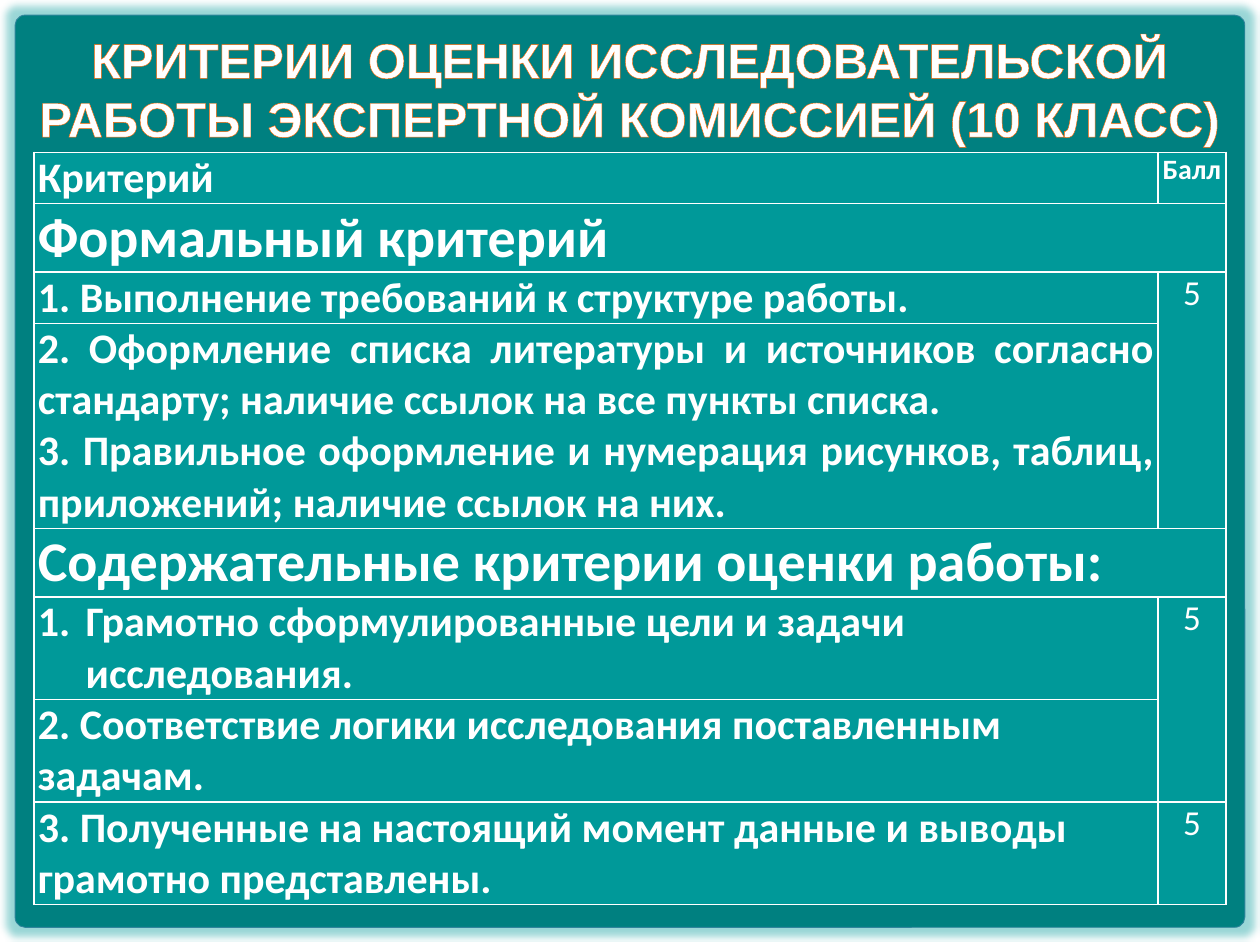
from dataclasses import dataclass
from lxml import etree
from pptx import Presentation
from pptx.dml.color import RGBColor as RGB
from pptx.enum.shapes import MSO_SHAPE as Shape
from pptx.enum.text import MSO_ANCHOR as Anchor, MSO_AUTO_SIZE as Fit, PP_ALIGN as Align
from pptx.oxml.ns import qn
from pptx.util import Inches, Pt


@dataclass(frozen=True)
class Theme:
    white: str = "FFFFFF"
    panel: str = "008080"
    edge: str = "31859C"
    cell: str = "009999"
    trim: str = "FF6600"
    head: str = "Arial"
    body: str = "Calibri"
    title: int = 28
    group: int = 32
    text: int = 24
    score: int = 20
    label: int = 16


T = Theme()
HEADS = ("Критерий", "Балл")
# Each group: heading, criteria rows, scores as (first row, row count, value)
GROUPS = [
    ("Формальный критерий", [
        ["1. Выполнение требований к структуре работы. "],
        ["2. Оформление списка литературы и источников согласно стандарту; "
         "наличие ссылок на все пункты списка.",
         "3. Правильное оформление и нумерация рисунков, таблиц, приложений; "
         "наличие ссылок на них."],
    ], Align.JUSTIFY, [(0, 2, "5")]),
    ("Содержательные критерии оценки работы:", [
        ["Грамотно сформулированные цели и задачи исследования."],
        ["2. Соответствие логики исследования поставленным задачам."],
        ["3. Полученные на настоящий момент данные и выводы грамотно представлены."],
    ], Align.LEFT, [(0, 2, "5"), (2, 1, "5")]),
]
COLS = (8.92, 0.54)
ROWS = (0.4, 0.54, 0.39, 1.6, 0.54, 0.8, 0.8, 0.8)


def sub(node, tag, **attrs):
    return etree.SubElement(node, qn(tag), {k: str(v) for k, v in attrs.items()})


def line(tag, color, width):
    node = etree.Element(qn(tag), {"w": str(Pt(width))})
    sub(sub(node, "a:solidFill"), "a:srgbClr", val=color)
    return node


def write(frame, *texts, size=T.text, font=T.body, bold=True, align=Align.LEFT,
          gap=0, trim=None, auto=False):
    frame.word_wrap = True
    for i, text in enumerate(texts):
        para = frame.paragraphs[0] if i == 0 else frame.add_paragraph()
        para.alignment = align
        para.space_before = para.space_after = Pt(gap)
        run = para.add_run()
        run.text = text
        run.font.size, run.font.name, run.font.bold = Pt(size), font, bold
        run.font.color.rgb = RGB.from_string(T.white)
        if trim:
            run.font._element.insert(0, line("a:ln", trim, 0.25))
        if auto:
            props = para._p.get_or_add_pPr()
            props.set("marL", str(Inches(0.38)))
            props.set("indent", str(-Inches(0.38)))
            sub(props, "a:buFont", typeface="+mj-lt")
            sub(props, "a:buAutoNum", type="arabicPeriod")


def panel(slide, box):
    back = slide.shapes.add_shape(Shape.ROUNDED_RECTANGLE, *map(Inches, box))
    back.adjustments[0] = 0.011
    back.fill.solid()
    back.fill.fore_color.rgb = RGB.from_string(T.panel)
    back.line.color.rgb = RGB.from_string(T.edge)
    back.line.width = Pt(0.5)
    back.shadow.inherit = False
    # Soft glow around the edge
    glow = sub(back._element.spPr.find(qn("a:effectLst")), "a:glow", rad=Inches(0.11))
    sub(sub(glow, "a:srgbClr", val=T.cell), "a:alpha", val=40000)


def title(slide, box):
    head = slide.shapes.title
    head.left, head.top, head.width, head.height = map(Inches, box)
    frame = head.text_frame
    frame.auto_size = Fit.NONE
    frame.vertical_anchor = Anchor.MIDDLE
    write(frame, "КРИТЕРИИ ОЦЕНКИ ИССЛЕДОВАТЕЛЬСКОЙ РАБОТЫ ЭКСПЕРТНОЙ КОМИССИЕЙ (10 КЛАСС)",
          size=T.title, font=T.head, align=Align.CENTER, trim=T.trim)
    # Bring the title in front of the panel
    slide.shapes._spTree.append(head._element)


def style(cell):
    cell.margin_left = cell.margin_right = Inches(0.03)
    cell.margin_top = cell.margin_bottom = 0
    cell.fill.solid()
    cell.fill.fore_color.rgb = RGB.from_string(T.cell)
    props = cell._tc.get_or_add_tcPr()
    for i, side in enumerate("LRTB"):
        props.insert(i, line(f"a:ln{side}", T.white, 1))


def grid(slide, box):
    table = slide.shapes.add_table(len(ROWS), len(COLS), *map(Inches, box)).table
    table.first_row = table.horz_banding = False
    for col, width in zip(table.columns, COLS):
        col.width = Inches(width)
    for row, height in zip(table.rows, ROWS):
        row.height = Inches(height)
    for cell in table.iter_cells():
        style(cell)

    # Header row
    write(table.cell(0, 0).text_frame, HEADS[0], gap=6)
    write(table.cell(0, 1).text_frame, HEADS[1], size=T.label, align=Align.CENTER, gap=6)

    # Groups of criteria with their scores
    top = 1
    for name, items, align, scores in GROUPS:
        first = table.cell(top, 0)
        first.merge(table.cell(top, 1))
        write(first.text_frame, name, size=T.group, gap=6)
        top += 1
        for i, texts in enumerate(items):
            write(table.cell(top + i, 0).text_frame, *texts, align=align,
                  gap=6 if len(texts) == 1 else 0, auto=not texts[0][0].isdigit())
        for start, count, value in scores:
            mark = table.cell(top + start, 1)
            if count > 1:
                mark.merge(table.cell(top + start + count - 1, 1))
            write(mark.text_frame, value, size=T.score, bold=False,
                  align=Align.CENTER, gap=6)
        top += len(items)


def main():
    deck = Presentation()
    deck.slide_width, deck.slide_height = Inches(10), Inches(7.5)
    slide = deck.slides.add_slide(deck.slide_layouts[5])
    panel(slide, (0.12, 0.12, 9.76, 7.24))
    title(slide, (0.12, 0.18, 9.75, 1.04))
    grid(slide, (0.27, 1.21, sum(COLS), sum(ROWS)))
    deck.save("out.pptx")


if __name__ == "__main__":
    main()
